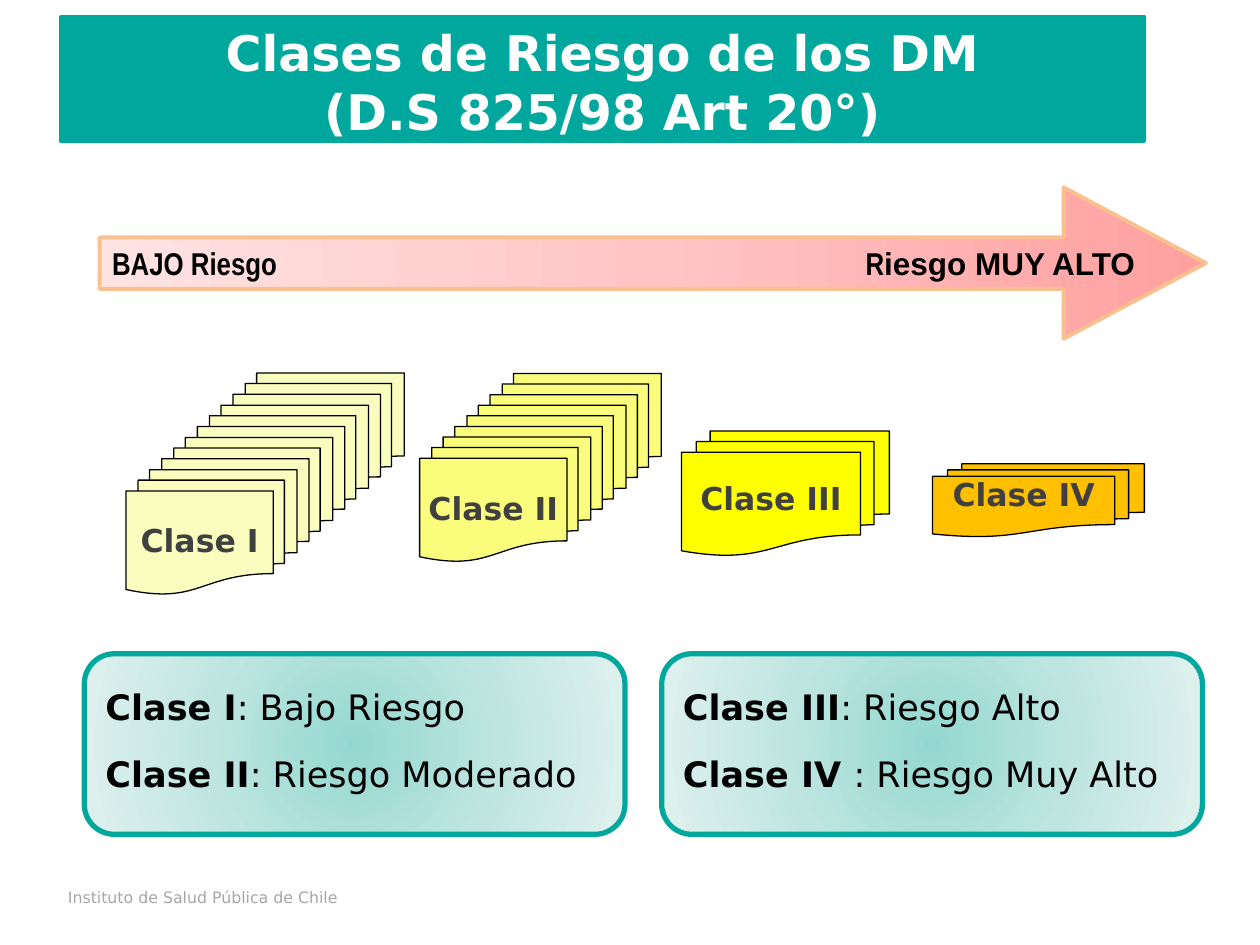
import pptx
import pptx.util
from dataclasses import dataclass
from pptx.dml.color import RGBColor
from pptx.enum.shapes import MSO_SHAPE
from pptx.enum.text import MSO_ANCHOR, PP_ALIGN
from pptx.oxml import parse_xml
from pptx.oxml.ns import nsdecls
from pptx.util import Cm, Pt


@dataclass(frozen=True)
class Theme:
    teal: str = "00A79D"
    white: str = "FFFFFF"
    black: str = "000000"
    label: str = "404040"
    footer: str = "A6A6A6"
    arrow_line: str = "FAC090"
    arrow_stops: tuple = ("FFA0A0", "FFC5C5", "FFE3E3")
    box_stops: tuple = ("93D8D0", "BEE5E0", "E0F1EF")
    class_1: str = "F9FEBE"
    class_2: str = "FAFD7B"
    class_3: str = "FFFF00"
    class_4: str = "FFC000"
    font: str = "DejaVu Sans"
    title_pt: int = 28
    box_pt: int = 20
    label_pt: int = 18
    footer_pt: int = 9


T = Theme()
LINEAR = '<a:lin ang="10800000" scaled="0"/>'
RADIAL = ('<a:path path="circle"><a:fillToRect l="50000" t="50000" '
          'r="50000" b="50000"/></a:path>')


def add_shape(kind, box, fill, line, width, direction=None):
    """Add a shape; with a direction, fill holds three gradient stops."""
    sp = s.shapes.add_shape(kind, *map(Cm, box))
    sp.shadow.inherit = False
    sp.line.color.rgb = RGBColor.from_string(line)
    sp.line.width = Pt(width)
    if direction:
        stops = "".join(
            f'<a:gs pos="{i * 50000}"><a:srgbClr val="{color}"/></a:gs>'
            for i, color in enumerate(fill))
        sp._element.spPr.find(pptx.oxml.ns.qn("a:prstGeom")).addnext(parse_xml(
            f'<a:gradFill {nsdecls("a")} rotWithShape="1">'
            f'<a:gsLst>{stops}</a:gsLst>{direction}</a:gradFill>'))
    else:
        sp.fill.solid()
        sp.fill.fore_color.rgb = RGBColor.from_string(fill)
    return sp


def add_run(p, text, size, color, bold=True, name=T.font):
    r = p.add_run()
    r.text = text
    fmt = {"size": Pt(size), "bold": bold, "name": name}
    for key, value in fmt.items():
        setattr(r.font, key, value)
    r.font.color.rgb = RGBColor.from_string(color)


prs = pptx.Presentation()
prs.slide_width, prs.slide_height = Cm(25.4), Cm(19.05)
s = prs.slides.add_slide(prs.slide_layouts[6])

# Footer
tf = s.shapes.add_textbox(Cm(1.12), Cm(17.78), Cm(9.19), Cm(1.27)).text_frame
tf.word_wrap = True
add_run(tf.paragraphs[0], "Instituto de Salud Pública de Chile",
        T.footer_pt, T.footer, bold=False)

# Risk arrow, with a tab between its two ends
sp = add_shape(MSO_SHAPE.RIGHT_ARROW, (2.01, 3.78, 22.3, 3.05),
               T.arrow_stops, T.arrow_line, 2.25, LINEAR)
sp.adjustments[0], sp.adjustments[1] = 0.34, 0.94
tf = sp.text_frame
tf.word_wrap = False
tf.vertical_anchor = MSO_ANCHOR.MIDDLE
p = tf.paragraphs[0]
p.alignment = PP_ALIGN.LEFT
p._p.get_or_add_pPr().append(parse_xml(
    f'<a:tabLst {nsdecls("a")}><a:tab pos="{Cm(15.19)}" algn="l"/></a:tabLst>'))
for text, name in (("BAJO Riesgo\tR", "Arial Narrow"), ("iesgo MUY ALTO", "Arial")):
    add_run(p, text, T.label_pt, T.black, name=name)

# Document stacks: label, front sheet box, count, step, fill, anchor, spacing
stacks = [
    ("Clase IV", (18.8, 9.35, 4.27, 1.47), 1, (0, 0), T.class_4, MSO_ANCHOR.TOP, 0.8),
    ("Clase III", (13.74, 8.69, 4.19, 2.51), 1, (0, 0), T.class_3, MSO_ANCHOR.MIDDLE, 0.75),
    ("Clase II", (8.46, 8.81, 3.45, 2.51), 3, (0.71, 0.64), T.class_2, MSO_ANCHOR.MIDDLE, 1.0),
    ("Clase I", (2.54, 9.47, 3.45, 2.51), 4, (0.72, 0.65), T.class_1, MSO_ANCHOR.MIDDLE, 1.0),
]
for label, (x, y, w, h), count, (dx, dy), color, anchor, spacing in stacks:
    for i in reversed(range(count)):
        sp = add_shape(MSO_SHAPE.FLOWCHART_MULTIDOCUMENT,
                       (x + i * dx, y - i * dy, w, h), color, T.black, 0.75)
    tf = sp.text_frame
    tf.word_wrap = anchor == MSO_ANCHOR.TOP
    tf.vertical_anchor = anchor
    p = tf.paragraphs[0]
    p.alignment = PP_ALIGN.CENTER
    p.line_spacing = spacing
    add_run(p, label, T.label_pt, T.label)

# Title
sp = add_shape(MSO_SHAPE.ROUNDED_RECTANGLE, (1.22, 0.33, 21.84, 2.51), T.teal, T.teal, 2)
sp.adjustments[0] = 0
tf = sp.text_frame
tf.vertical_anchor = MSO_ANCHOR.TOP
p = tf.paragraphs[0]
p.alignment = PP_ALIGN.CENTER
add_run(p, "Clases de Riesgo de los DM", T.title_pt, T.white)
p.add_line_break()
add_run(p, "(D.S 825/98 Art 20°)", T.title_pt, T.white)

# Class descriptions
boxes = [
    (1.7, [("Clase I", ": Bajo Riesgo"), ("Clase II", ": Riesgo Moderado")]),
    (13.34, [("Clase III", ": Riesgo Alto"), ("Clase IV ", ": Riesgo Muy Alto")]),
]
for x, rows in boxes:
    sp = add_shape(MSO_SHAPE.ROUNDED_RECTANGLE, (x, 13.18, 10.9, 3.64),
                   T.box_stops, T.teal, 3, RADIAL)
    tf = sp.text_frame
    tf.vertical_anchor = MSO_ANCHOR.MIDDLE
    for i, (name, risk) in enumerate(rows):
        p = tf.add_paragraph() if i else tf.paragraphs[0]
        p.alignment = PP_ALIGN.LEFT
        p.line_spacing = 0.8
        if i:
            p.space_before = Pt(19)
        add_run(p, name, T.box_pt, T.black)
        add_run(p, risk, T.box_pt, T.black, bold=False)

prs.save("out.pptx")
